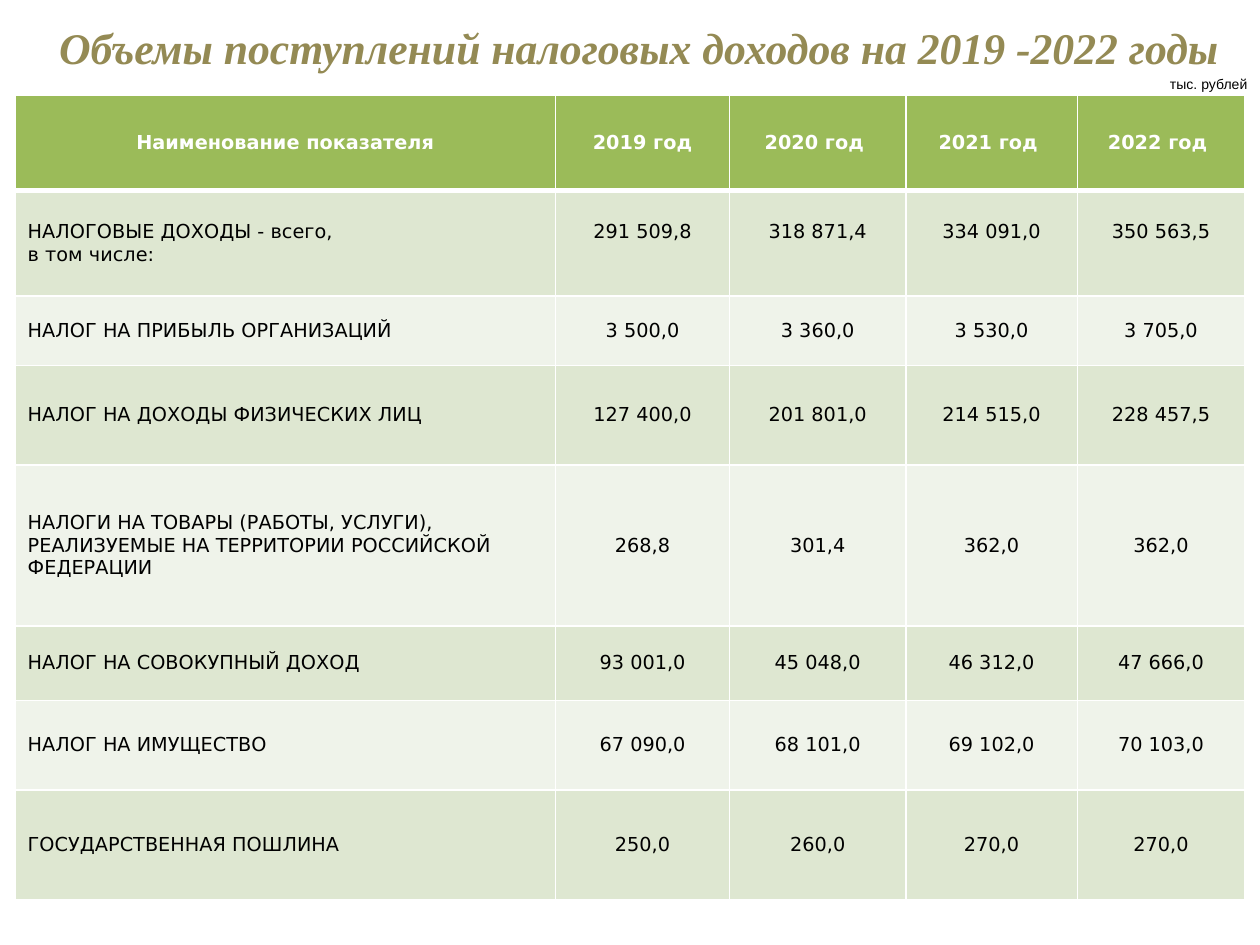
import lxml.etree
import pptx
import pptx.dml.color
import pptx.enum.text
import pptx.oxml.ns
import pptx.util

Inches, Pt = pptx.util.Inches, pptx.util.Pt
Align = pptx.enum.text.PP_ALIGN
Anchor = pptx.enum.text.MSO_ANCHOR
Fit = pptx.enum.text.MSO_AUTO_SIZE
Color = pptx.dml.color.RGBColor.from_string
qn = pptx.oxml.ns.qn

THEME = {
    "title": ("Times New Roman", 25, "948A54"),
    "unit": ("Arial", 8, "000000"),
    "head": ("DejaVu Sans", 11, "FFFFFF"),
    "body": ("DejaVu Sans", 11, "000000"),
    "green": "9BBB59",
    "bands": ("EFF3EA", "DEE7D1"),
    "rule": "FFFFFF",
}
WIDE, HIGH = 10, 7.5
COLS = (4.29, 1.38, 1.4, 1.36, 1.33)
ROWS = (0.75, 0.84, 0.55, 0.79, 1.28, 0.59, 0.71, 0.87)
DATA = (
    ("Наименование показателя", "2019 год", "2020 год ", "2021 год ", "2022 год "),
    ("НАЛОГОВЫЕ ДОХОДЫ - всего,\nв том числе:",
     "291 509,8", "318 871,4", "334 091,0", "350 563,5"),
    ("НАЛОГ НА ПРИБЫЛЬ ОРГАНИЗАЦИЙ", "3 500,0", "3 360,0", "3 530,0", "3 705,0"),
    ("НАЛОГ НА ДОХОДЫ ФИЗИЧЕСКИХ ЛИЦ",
     "127 400,0", "201 801,0", "214 515,0", "228 457,5"),
    ("НАЛОГИ НА ТОВАРЫ (РАБОТЫ, УСЛУГИ), РЕАЛИЗУЕМЫЕ НА ТЕРРИТОРИИ РОССИЙСКОЙ ФЕДЕРАЦИИ",
     "268,8", "301,4", "362,0", "362,0"),
    ("НАЛОГ НА СОВОКУПНЫЙ ДОХОД", "93 001,0", "45 048,0", "46 312,0", "47 666,0"),
    ("НАЛОГ НА ИМУЩЕСТВО", "67 090,0", "68 101,0", "69 102,0", "70 103,0"),
    ("ГОСУДАРСТВЕННАЯ ПОШЛИНА", "250,0", "260,0", "270,0", "270,0"),
)


def write(frame, text, style, align, bold=False, italic=False):
    """Fill a text frame, one paragraph for each line of text."""
    for i, line in enumerate(text.split("\n")):
        para = frame.add_paragraph() if i else frame.paragraphs[0]
        para.alignment = align
        run = para.add_run()
        run.text = line
        font = run.font
        font.name, size, tint = THEME[style]
        font.size, font.color.rgb = Pt(size), Color(tint)
        font.bold, font.italic = bold, italic


def edge(cell, sides):
    """Draw cell borders; sides maps L, R, T, B, in that order, to points."""
    props = cell._tc.get_or_add_tcPr()
    for i, (side, width) in enumerate(sides.items()):
        line = lxml.etree.Element(qn("a:ln" + side), w=str(Pt(width)))
        fill = lxml.etree.SubElement(line, qn("a:solidFill"))
        lxml.etree.SubElement(fill, qn("a:srgbClr"), val=THEME["rule"])
        props.insert(i, line)


deck = pptx.Presentation()
deck.slide_width, deck.slide_height = Inches(WIDE), Inches(HIGH)
slide = deck.slides.add_slide(deck.slide_layouts[5])

# Title
title = slide.shapes.title
title.left, title.top = Inches(-0.91), Inches(-0.01)
title.width, title.height = Inches(11.18), Inches(0.76)
frame = title.text_frame
frame.auto_size, frame.vertical_anchor = Fit.NONE, Anchor.MIDDLE
write(frame, "Объемы поступлений налоговых доходов на 2019 -2022 годы",
      "title", Align.CENTER, bold=True, italic=True)
indent = frame.paragraphs[0]._p.get_or_add_pPr()
indent.set("marL", str(Inches(0.78)))
indent.set("indent", "0")

# Table
table = slide.shapes.add_table(
    len(ROWS), len(COLS), Inches(0.12), Inches(0.76),
    Inches(sum(COLS)), Inches(sum(ROWS))).table
for col, width in zip(table.columns, COLS):
    col.width = Inches(width)
for row, height in zip(table.rows, ROWS):
    row.height = Inches(height)

for r, texts in enumerate(DATA):
    head = r == 0
    for c, text in enumerate(texts):
        cell = table.cell(r, c)
        cell.vertical_anchor = Anchor.MIDDLE
        cell.margin_left = cell.margin_right = Inches(0.1)
        cell.margin_top = cell.margin_bottom = Inches(0.05)
        if r == 1 and c:  # totals stand level with the first line of their label
            cell.margin_bottom = Inches(0.23)
        cell.fill.solid()
        cell.fill.fore_color.rgb = Color(THEME["green"] if head else THEME["bands"][r % 2])
        write(cell.text_frame, text, "head" if head else "body",
              Align.CENTER if head or c else Align.LEFT, bold=head)
        edge(cell, {"L": 1, "R": 1, "T": 3 if r == 1 else 1, "B": 3 if head else 1})

# Unit of measure
unit = slide.shapes.add_textbox(
    Inches(WIDE - 0.83), Inches(0.55), Inches(0.83), Inches(0.24))
unit.text_frame.word_wrap = False
unit.text_frame.auto_size = Fit.SHAPE_TO_FIT_TEXT
write(unit.text_frame, "тыс. рублей", "unit", Align.RIGHT)

deck.save("out.pptx")
